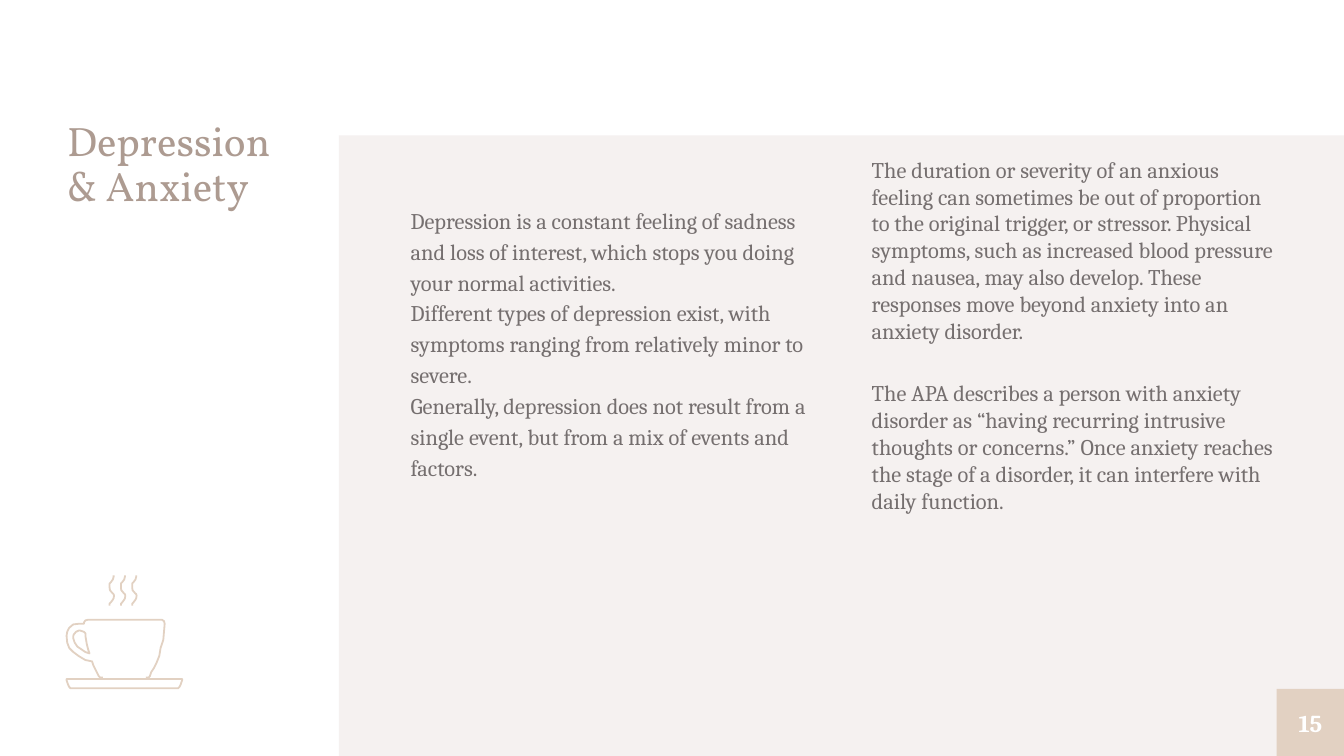
from pptx import Presentation
from pptx.dml.color import RGBColor
from pptx.enum.shapes import MSO_SHAPE
from pptx.enum.text import MSO_ANCHOR, PP_ALIGN
from pptx.util import Pt

WHITE = RGBColor(0xFF, 0xFF, 0xFF)
PALE = RGBColor(0xF5, 0xF1, 0xF0)
SAND = RGBColor(0xE2, 0xD1, 0xC2)
TAUPE = RGBColor(0xAD, 0x9B, 0x91)
GREY = RGBColor(0x75, 0x6F, 0x6F)

WIDTH, HEIGHT = 720, 405
TITLE = "Depression\n& Anxiety"
DEPRESSION = [
    "Depression is a constant feeling of sadness and loss of interest, which stops you "
    "doing your normal activities.",
    "Different types of depression exist, with symptoms ranging from relatively minor to "
    "severe.",
    "Generally, depression does not result from a single event, but from a mix of events "
    "and factors.",
]
ANXIETY = [
    "The duration or severity of an anxious feeling can sometimes be out of proportion to "
    "the original trigger, or stressor. Physical symptoms, such as increased blood "
    "pressure and nausea, may also develop. These responses move beyond anxiety into an "
    "anxiety disorder.",
    "The APA describes a person with anxiety disorder as “having recurring intrusive "
    "thoughts or concerns.” Once anxiety reaches the stage of a disorder, it can "
    "interfere with daily function.",
]

# Icon outlines, in grid steps from the icon's top left corner
GRID = 0.72
CUP = [(59, 76), (61, 76), (62, 75), (63, 72), (65, 69), (67, 65), (69, 60), (70, 54),
       (72, 48), (72.5, 42), (73, 36), (72.5, 34), (71, 33), (70, 33), (16, 33),
       (14, 33.5), (13, 35), (13, 36), (9, 36), (5, 36.5), (2, 39), (0.5, 42), (0, 45),
       (0.5, 50), (2, 54), (5, 57), (9, 60), (14, 63), (19, 64), (20, 67), (23, 73),
       (24, 75), (25, 76), (27, 76)]
HANDLE = [(5, 45), (5.3, 44), (7, 42), (9, 41), (10, 41), (13, 42), (14, 43), (14, 45),
          (15, 51), (16, 55), (17, 58), (14, 57), (11, 55), (8, 53), (6, 50), (5, 47),
          (5, 45)]
SAUCER = [(81, 84), (5, 84), (3, 84), (2, 83), (1, 81), (0, 78), (0, 77), (86, 77),
          (86, 78), (85, 81), (84, 83), (83, 84)]
STEAM = [(3, 0), (3, 1), (2.5, 3), (1, 5), (0, 6), (0, 8), (0, 9), (0.3, 11), (2, 13),
         (3, 14), (3.3, 15), (3, 17), (2.5, 18), (1, 20), (0, 21), (0, 22.5)]


def add_rect(slide, box, color):
    rect = slide.shapes.add_shape(MSO_SHAPE.RECTANGLE, *map(Pt, box))
    rect.shadow.inherit = False
    rect.fill.solid()
    rect.fill.fore_color.rgb = color
    rect.line.fill.background()
    return rect


def set_text(frame, texts, font, size, color, spacing=1.0, gap=0):
    """Fill a frame without margins, with gap points between paragraphs."""
    frame.word_wrap = True
    frame.margin_left = frame.margin_right = frame.margin_top = frame.margin_bottom = 0
    for i, text in enumerate(texts):
        para = frame.add_paragraph() if i else frame.paragraphs[0]
        para.text = text
        para.line_spacing = spacing
        if i and gap:
            para.space_before = Pt(gap)
        for run in para.runs:
            run.font.name = font
            run.font.size = Pt(size)
            run.font.color.rgb = color


def add_title(slide, box):
    frame = slide.shapes.add_textbox(*map(Pt, box)).text_frame
    set_text(frame, [TITLE], "Vollkorn", 22, TAUPE, spacing=0.9)


def add_column(slide, box, texts, spacing=1.0, gap=0):
    frame = slide.shapes.add_textbox(*map(Pt, box)).text_frame
    set_text(frame, texts, "Cambria", 12, GREY, spacing, gap)


def add_number(slide, box):
    frame = add_rect(slide, box, SAND).text_frame
    set_text(frame, ["15"], "Cambria", 13, WHITE)
    frame.vertical_anchor = MSO_ANCHOR.MIDDLE
    para = frame.paragraphs[0]
    para.alignment = PP_ALIGN.CENTER
    para.runs[0].font.bold = True


def add_outline(group, left, top, steps, close=False):
    dots = [(Pt(left + x * GRID), Pt(top + y * GRID)) for x, y in steps]
    builder = group.shapes.build_freeform(*dots[0])
    builder.add_line_segments(dots[1:], close=close)
    shape = builder.convert_to_shape()
    shape.shadow.inherit = False
    shape.fill.background()
    shape.line.color.rgb = SAND
    shape.line.width = Pt(0.96)


def add_coffee(slide, left, top):
    group = slide.shapes.add_group_shape()
    add_outline(group, left, top, CUP)
    add_outline(group, left, top, HANDLE)
    add_outline(group, left, top, SAUCER, close=True)
    for i in range(3):
        add_outline(group, left + (32 + 8.4 * i) * GRID, top, STEAM)


def main():
    deck = Presentation()
    deck.slide_width, deck.slide_height = Pt(WIDTH), Pt(HEIGHT)
    slide = deck.slides.add_slide(deck.slide_layouts[6])
    left, top = 181.5, 72.5
    add_rect(slide, (left, top, WIDTH - left, HEIGHT - top), PALE)
    add_column(slide, (220, 108.7, 217, 261), DEPRESSION, spacing=1.15)
    add_title(slide, (36, 65, 128, 304))
    add_column(slide, (467, 83.5, 217, 261), ANXIETY, gap=19)
    add_number(slide, (WIDTH - 36, HEIGHT - 36, 36, 36))
    add_coffee(slide, 35.7, 308.3)
    deck.save("out.pptx")


if __name__ == "__main__":
    main()
